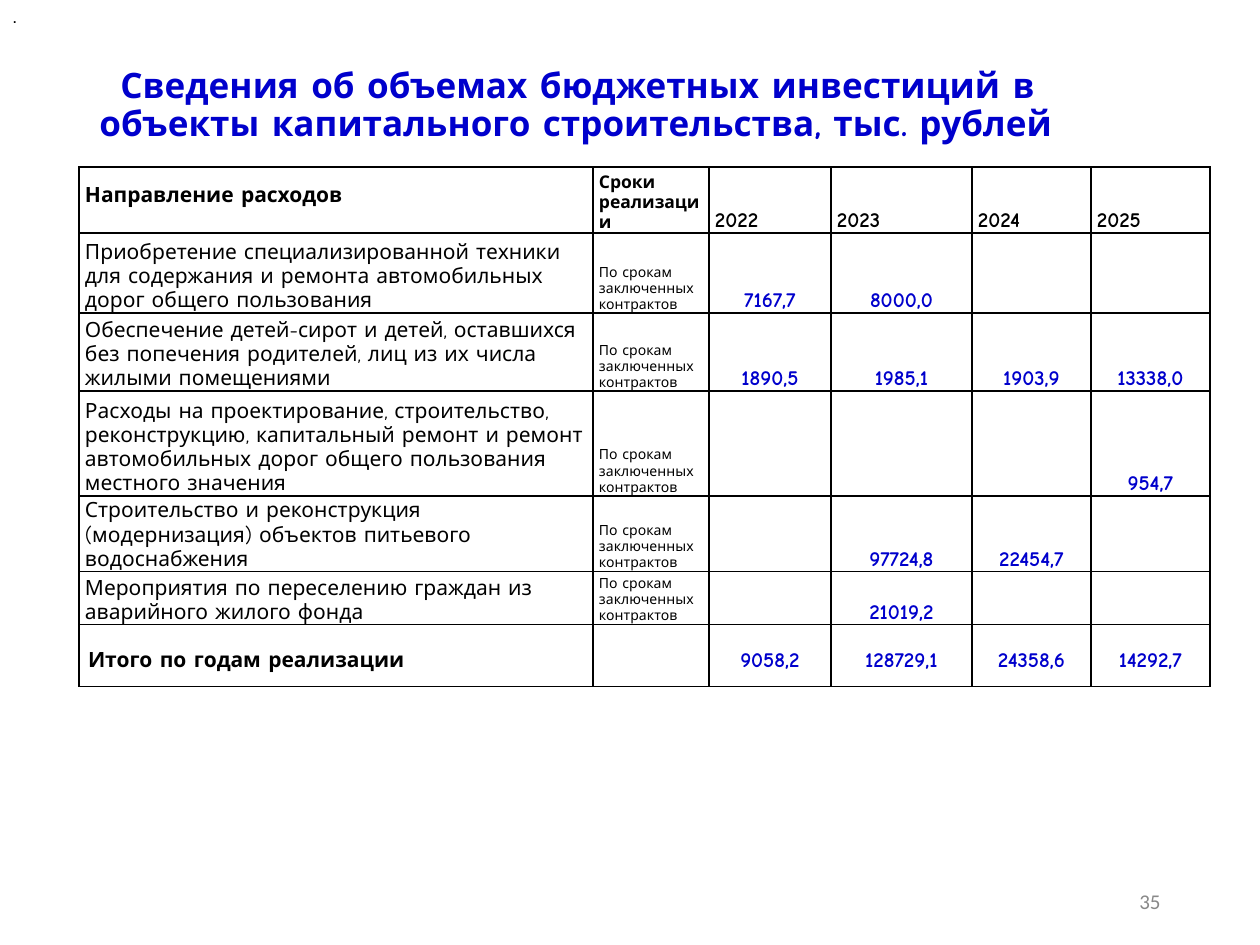
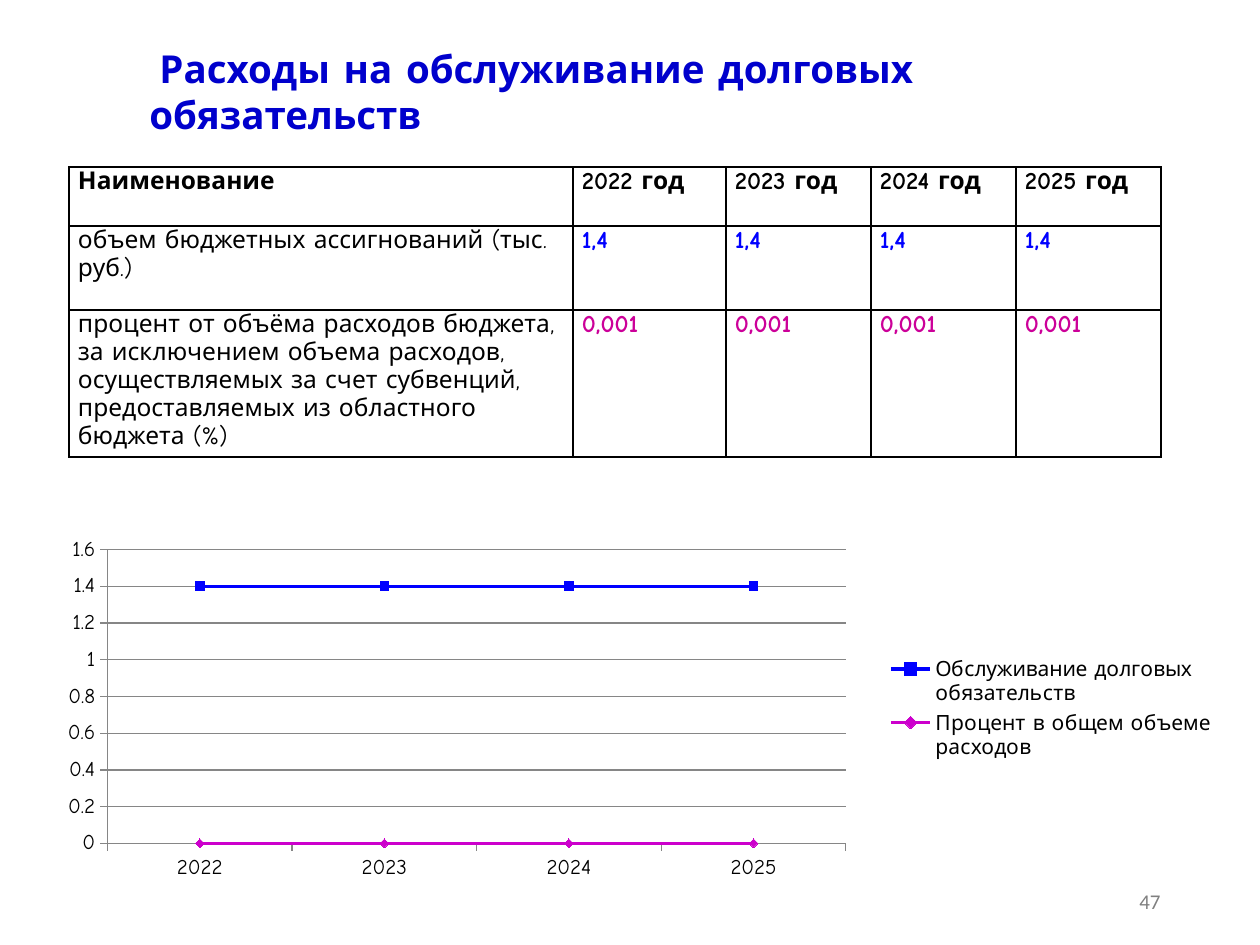
import dataclasses
import typing

import lxml.etree
import pptx
import pptx.chart.data
import pptx.dml.color
import pptx.enum.chart
import pptx.enum.text
import pptx.oxml.ns
import pptx.util

EMU_PER_PX = 914400 / 126
ALIGN = pptx.enum.text.PP_ALIGN
ANCHOR = pptx.enum.text.MSO_ANCHOR


@dataclasses.dataclass(frozen=True)
class Theme:
    body: str = "Comic Neue"
    number: str = "Calibri"
    plain: str = "Arial"
    ink: str = "000000"
    title: str = "0000CC"
    blue: str = "0000FF"
    pink: str = "CC0099"
    magenta: str = "CC00CC"
    grid: str = "868686"
    number_first: str = "898989"
    number_second: str = "808080"
    tiny: int = 8
    small: int = 10
    text: int = 12
    large: int = 14
    title_first: int = 20
    title_second: int = 22


THEME = Theme()


@dataclasses.dataclass(frozen=True)
class Box:
    left: int
    top: int
    width: int
    height: int


@dataclasses.dataclass(frozen=True)
class Style:
    size: int
    color: str = THEME.ink
    bold: bool = False
    font: str = THEME.body
    align: typing.Any = ALIGN.LEFT


@dataclasses.dataclass(frozen=True)
class Cell:
    text: str
    style: Style
    anchor: typing.Any = ANCHOR.BOTTOM
    side: int = 6
    top: int = 0
    bottom: int = 0


@dataclasses.dataclass(frozen=True)
class Series:
    name: str
    values: tuple[float, ...]
    color: str
    marker: typing.Any


LABEL = Style(THEME.text)
HEAD = Style(THEME.text, bold=True)
TERM = Style(THEME.tiny)
AMOUNT = Style(THEME.text, THEME.title, True, align=ALIGN.CENTER)
YEARS = ("2022", "2023", "2024", "2025")
CONTRACT_TERM = "По срокам заключенных контрактов"
INVESTMENTS = (
    ("Приобретение специализированной техники для содержания и ремонта автомобильных дорог общего пользования",
     ("7167,7", "8000,0", "", "")),
    ("Обеспечение детей-сирот и детей, оставшихся без попечения родителей, лиц из их числа жилыми помещениями",
     ("1890,5", "1985,1", "1903,9", "13338,0")),
    ("Расходы на проектирование, строительство, реконструкцию, капитальный ремонт и ремонт "
     "автомобильных дорог общего пользования местного значения",
     ("", "", "", "954,7")),
    ("Строительство и реконструкция (модернизация) объектов питьевого водоснабжения",
     ("", "97724,8", "22454,7", "")),
    ("Мероприятия по переселению граждан из аварийного жилого фонда",
     ("", "21019,2", "", "")),
)
TOTALS = ("9058,2", "128729,1", "24358,6", "14292,7")
DEBT_SERIES = (
    Series("Обслуживание долговых обязательств", (1.4,) * 4, THEME.blue,
           pptx.enum.chart.XL_MARKER_STYLE.SQUARE),
    Series("Процент в общем объеме расходов", (0,) * 4, THEME.magenta,
           pptx.enum.chart.XL_MARKER_STYLE.DIAMOND),
)


def px(n: int) -> pptx.util.Emu:
    return pptx.util.Emu(round(n * EMU_PER_PX))


def place(box: Box) -> tuple:
    return px(box.left), px(box.top), px(box.width), px(box.height)


def rgb(color: str) -> pptx.dml.color.RGBColor:
    return pptx.dml.color.RGBColor.from_string(color)


def set_font(font: typing.Any, style: Style) -> None:
    font.name = style.font
    font.size = pptx.util.Pt(style.size)
    font.bold = style.bold
    font.color.rgb = rgb(style.color)


def add_run(p: typing.Any, text: str, style: Style) -> None:
    p.alignment = style.align
    r = p.add_run()
    r.text = text
    set_font(r.font, style)


def add_text(s: typing.Any, box: Box, text: str, style: Style, anchor: typing.Any = ANCHOR.TOP,
             top: int = 6, indent: int = 0, spacing: float = 1.0, wrap: bool = True) -> None:
    tf = s.shapes.add_textbox(*place(box)).text_frame
    tf.word_wrap = wrap
    tf.vertical_anchor = anchor
    tf.margin_top = px(top)
    p = tf.paragraphs[0]
    p.line_spacing = spacing
    if indent:
        p._p.get_or_add_pPr().set("indent", str(px(indent)))
    add_run(p, text, style)


def add_number(s: typing.Any, number: int, color: str) -> None:
    style = Style(THEME.text, color, font=THEME.number, align=ALIGN.RIGHT)
    add_text(s, Box(890, 876, 283, 50), str(number), style, ANCHOR.MIDDLE)


def add_borders(cell: typing.Any) -> None:
    tc_pr = cell._tc.get_or_add_tcPr()
    for i, side in enumerate(("lnL", "lnR", "lnT", "lnB")):
        ln = tc_pr.makeelement(pptx.oxml.ns.qn(f"a:{side}"), {"w": str(pptx.util.Pt(1))})
        fill = lxml.etree.SubElement(ln, pptx.oxml.ns.qn("a:solidFill"))
        lxml.etree.SubElement(fill, pptx.oxml.ns.qn("a:srgbClr"), val=THEME.ink)
        tc_pr.insert(i, ln)


def add_grid(s: typing.Any, left: int, top: int, widths: tuple[int, ...],
             heights: tuple[int, ...], rows: list[list[Cell]]) -> None:
    box = Box(left, top, sum(widths), sum(heights))
    table = s.shapes.add_table(len(heights), len(widths), *place(box)).table
    table.first_row = table.horz_banding = False
    for column, width in zip(table.columns, widths):
        column.width = px(width)
    for row, height, cells in zip(table.rows, heights, rows):
        row.height = px(height)
        for cell, item in zip(row.cells, cells):
            cell.fill.background()
            add_borders(cell)
            cell.vertical_anchor = item.anchor
            cell.margin_left = cell.margin_right = px(item.side)
            cell.margin_top, cell.margin_bottom = px(item.top), px(item.bottom)
            if item.text:
                add_run(cell.text_frame.paragraphs[0], item.text, item.style)


def set_layout(parent: typing.Any, index: int, inner: bool,
               x: float, y: float, w: float, h: float) -> None:
    qn = pptx.oxml.ns.qn
    for old in parent.findall(qn("c:layout")):
        parent.remove(old)
    layout = parent.makeelement(qn("c:layout"), {})
    manual = lxml.etree.SubElement(layout, qn("c:manualLayout"))
    values = {"xMode": "edge", "yMode": "edge", "x": x, "y": y, "w": w, "h": h}
    if inner:
        values = {"layoutTarget": "inner", **values}
    for name, value in values.items():
        lxml.etree.SubElement(manual, qn(f"c:{name}"), val=str(value))
    parent.insert(index, layout)


def add_line_chart(s: typing.Any, box: Box, series: tuple[Series, ...]) -> None:
    data = pptx.chart.data.CategoryChartData()
    data.categories = YEARS
    for item in series:
        data.add_series(item.name, item.values)
    kind = pptx.enum.chart.XL_CHART_TYPE.LINE_MARKERS
    chart = s.shapes.add_chart(kind, *place(box), data).chart
    chart.has_title = False
    set_font(chart.font, LABEL)
    chart.plots[0].vary_by_categories = False
    for line, item in zip(chart.plots[0].series, series):
        line.smooth = False
        line.format.line.color.rgb = rgb(item.color)
        line.format.line.width = pptx.util.Pt(2)
        line.marker.style = item.marker
        line.marker.size = 5
        line.marker.format.fill.solid()
        line.marker.format.fill.fore_color.rgb = rgb(item.color)
        line.marker.format.line.color.rgb = rgb(item.color)
    for axis in (chart.category_axis, chart.value_axis):
        set_font(axis.tick_labels.font, LABEL)
        axis.format.line.color.rgb = rgb(THEME.grid)
        axis.major_tick_mark = pptx.enum.chart.XL_TICK_MARK.OUTSIDE
    axis = chart.value_axis
    axis.minimum_scale, axis.maximum_scale, axis.major_unit = 0, 1.6, 0.2
    axis.major_gridlines.format.line.color.rgb = rgb(THEME.grid)
    chart.has_legend = True
    legend = chart.legend
    legend.position = pptx.enum.chart.XL_LEGEND_POSITION.RIGHT
    legend.include_in_layout = False
    set_font(legend.font, LABEL)
    set_layout(chart._chartSpace.chart.plotArea, 0, True, 0.05, 0.05, 0.63, 0.83)
    set_layout(legend._element, 1, False, 0.71, 0.34, 0.29, 0.32)


def build_investments(s: typing.Any) -> None:
    add_text(s, Box(87, 50, 1086, 97),
             "Сведения об объемах бюджетных инвестиций в объекты капитального строительства, тыс. рублей",
             Style(THEME.title_first, THEME.title, True), ANCHOR.MIDDLE, top=22, indent=21, spacing=0.9)
    add_number(s, 35, THEME.number_first)
    rows = [[Cell("Направление расходов", HEAD, bottom=25),
             Cell("Сроки реализации", Style(THEME.small, bold=True)),
             *(Cell(year, HEAD) for year in YEARS)]]
    for purpose, amounts in INVESTMENTS:
        rows.append([Cell(purpose, LABEL), Cell(CONTRACT_TERM, TERM),
                     *(Cell(amount, AMOUNT) for amount in amounts)])
    totals = (("Итого по годам реализации", HEAD), ("", HEAD), *((total, AMOUNT) for total in TOTALS))
    rows.append([Cell(text, style, ANCHOR.TOP, side=9, top=24) for text, style in totals])
    add_grid(s, 79, 167, (514, 116, 122, 141, 119, 119), (66, 80, 78, 105, 72, 53, 62), rows)
    add_text(s, Box(0, 0, 30, 72), ".", Style(THEME.small, font=THEME.plain), wrap=False)


def build_debt(s: typing.Any) -> None:
    add_number(s, 47, THEME.number_second)
    head, label = Style(THEME.large, bold=True), Style(THEME.large)
    lines = (
        ("Наименование", head, [f"{year} год" for year in YEARS], THEME.ink),
        ("объем бюджетных ассигнований (тыс. руб.)", label, ["1,4"] * 4, THEME.blue),
        ("процент от объёма расходов бюджета, за исключением объема расходов, осуществляемых "
         "за счет субвенций, предоставляемых из областного бюджета (%)", label, ["0,001"] * 4, THEME.pink),
    )
    rows = [[Cell(name, style, ANCHOR.TOP, side=9),
             *(Cell(value, Style(THEME.large, color, True), ANCHOR.TOP, side=9) for value in values)]
            for name, style, values, color in lines]
    add_grid(s, 69, 167, (504, 153, 145, 145, 145), (59, 84, 142), rows)
    add_line_chart(s, Box(49, 532, 1172, 354), DEBT_SERIES)
    add_text(s, Box(137, 39, 1014, 104), "Расходы на обслуживание долговых обязательств",
             Style(THEME.title_second, THEME.title, True), indent=10)


def main() -> None:
    prs = pptx.Presentation()
    prs.slide_width, prs.slide_height = px(1260), px(945)
    for build in (build_investments, build_debt):
        build(prs.slides.add_slide(prs.slide_layouts[6]))
    prs.save("out.pptx")


if __name__ == "__main__":
    main()
